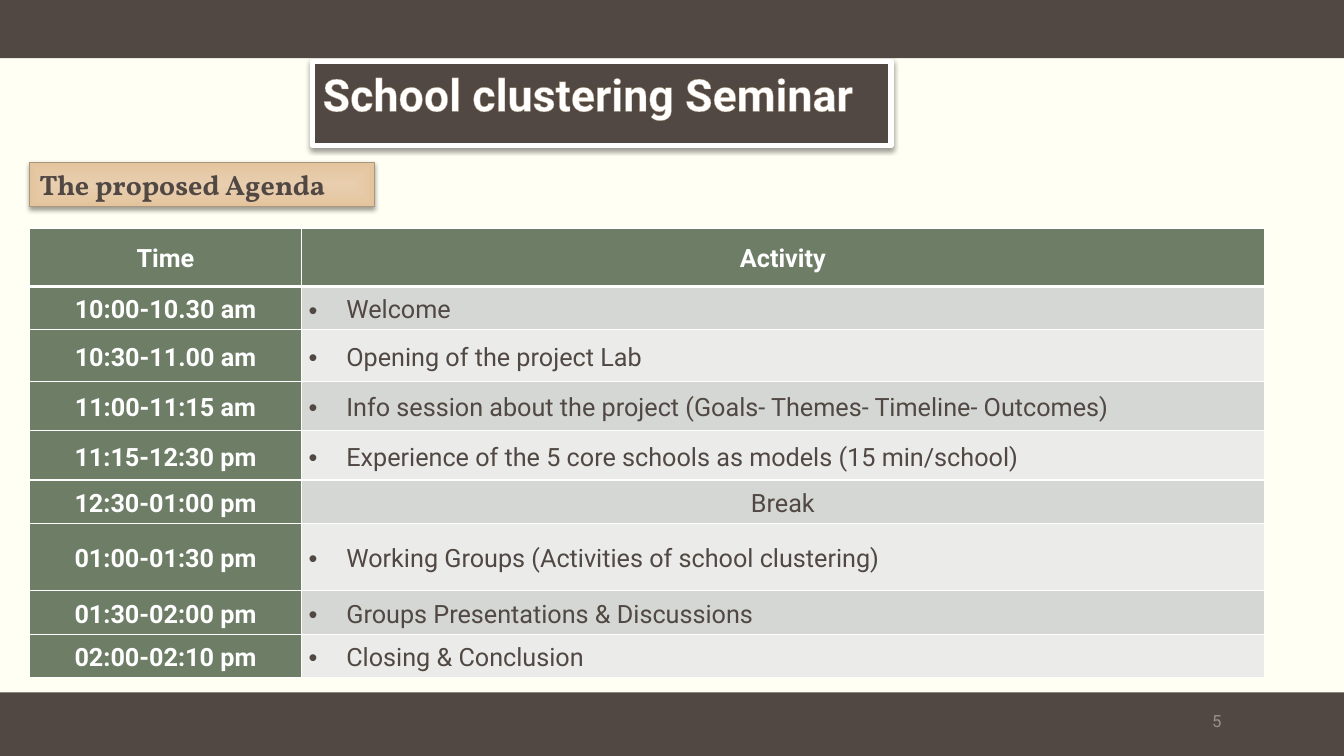
from dataclasses import dataclass

from lxml import etree
from pptx import Presentation
from pptx.dml.color import RGBColor
from pptx.enum.shapes import MSO_SHAPE
from pptx.enum.text import MSO_ANCHOR, MSO_AUTO_SIZE, PP_ALIGN
from pptx.oxml import parse_xml
from pptx.oxml.ns import qn
from pptx.util import Pt

RECTANGLE = MSO_SHAPE.RECTANGLE
TOP, MIDDLE = MSO_ANCHOR.TOP, MSO_ANCHOR.MIDDLE
LEFT, CENTER, RIGHT, JUSTIFY = PP_ALIGN.LEFT, PP_ALIGN.CENTER, PP_ALIGN.RIGHT, PP_ALIGN.JUSTIFY
FIT_SHAPE = MSO_AUTO_SIZE.SHAPE_TO_FIT_TEXT
DRAWING = 'xmlns:a="http://schemas.openxmlformats.org/drawingml/2006/main"'


@dataclass(frozen=True)
class Theme:
    page: str = "FFFFF3"
    brown: str = "514843"
    white: str = "FFFFFF"
    green: str = "6D7D66"
    stripes: tuple = ("D4D7D3", "EBECEA")
    tan: tuple = ("E8CEAF", "E4C49D")
    tan_line: str = "AB977A"
    title_outline: str = "AE9A7E"
    number: str = "9D8F88"
    body_font: str = "Roboto"
    label_font: str = "Vollkorn"
    title_size: float = 32
    label_size: float = 20
    table_size: float = 18
    number_size: float = 12


THEME = Theme()
PAGE_WIDTH, PAGE_HEIGHT = 960, 540
COLUMN_WIDTHS = (194.4, 687.6)
ROW_HEIGHTS = (41.8, 31, 36.7, 35.3, 35.3, 31, 48.2, 31, 31)
HEADINGS = ("Time", "Activity")
BREAK = "Break"
AGENDA = (
    ("10:00-10.30 am", "Welcome"),
    ("10:30-11.00 am", "Opening of the project Lab"),
    ("11:00-11:15 am", "Info session about the project (Goals- Themes- Timeline- Outcomes)"),
    ("11:15-12:30 pm", "Experience of the 5 core schools as models (15 min/school)"),
    ("12:30-01:00 pm", BREAK),
    ("01:00-01:30 pm", "Working Groups (Activities of school clustering)"),
    ("01:30-02:00 pm", "Groups Presentations & Discussions"),
    ("02:00-02:10 pm", "Closing & Conclusion"),
)


def color(value):
    return RGBColor.from_string(value)


def points(*lengths):
    return [Pt(length) for length in lengths]


def set_font(para, name, size, value, bold=False):
    para.font.name = name
    para.font.size = Pt(size)
    para.font.bold = bold
    para.font.color.rgb = color(value)


def add_shadow(shape):
    shape.shadow.inherit = False
    effects = shape._element.spPr.find(qn("a:effectLst"))
    effects.append(parse_xml(
        f'<a:outerShdw {DRAWING} blurRad="{Pt(3.5)}" dist="{Pt(2)}" dir="5400000" '
        'rotWithShape="0"><a:srgbClr val="000000"><a:alpha val="38000"/>'
        '</a:srgbClr></a:outerShdw>'))


def set_line(shape, value, width):
    shape.line.color.rgb = color(value)
    shape.line.width = Pt(width)


def fill_frame(shape, text, align):
    frame = shape.text_frame
    frame.word_wrap = True
    frame.auto_size = FIT_SHAPE
    frame.vertical_anchor = TOP
    para = frame.paragraphs[0]
    para.alignment = align
    para.add_run().text = text
    return para


def add_band(page, box):
    band = page.shapes.add_shape(RECTANGLE, *points(*box))
    band.shadow.inherit = False
    band.fill.solid()
    band.fill.fore_color.rgb = color(THEME.brown)
    band.line.fill.background()


def add_title(page, box):
    title = page.shapes.title
    title.left, title.top, title.width, title.height = points(*box)
    title.fill.solid()
    title.fill.fore_color.rgb = color(THEME.brown)
    set_line(title, THEME.white, 3.82)
    add_shadow(title)
    para = fill_frame(title, "School clustering Seminar", LEFT)
    set_font(para, THEME.body_font, THEME.title_size, THEME.white, True)
    span = para.runs[0]._r.get_or_add_rPr()
    span.insert(0, parse_xml(
        f'<a:ln {DRAWING} w="{Pt(0.8)}"><a:solidFill>'
        f'<a:srgbClr val="{THEME.title_outline}"/></a:solidFill></a:ln>'))


def add_label(page, box):
    label = page.shapes.add_shape(RECTANGLE, *points(*box))
    label.fill.gradient()
    for stop, value in zip(label.fill.gradient_stops, THEME.tan):
        stop.color.rgb = color(value)
    gradient = label._element.spPr.find(qn("a:gradFill"))
    gradient.remove(gradient.find(qn("a:lin")))
    center = etree.SubElement(gradient, qn("a:path"), path="rect")
    etree.SubElement(center, qn("a:fillToRect"), l="50000", t="50000", r="50000", b="50000")
    set_line(label, THEME.tan_line, 0.5)
    add_shadow(label)
    para = fill_frame(label, "The proposed Agenda", JUSTIFY)
    set_font(para, THEME.label_font, THEME.label_size, THEME.brown, True)


def set_borders(cell, top, bottom):
    properties = cell._tc.get_or_add_tcPr()
    for side, width in (("L", 1), ("R", 1), ("T", top), ("B", bottom)):
        properties.append(parse_xml(
            f'<a:ln{side} {DRAWING} w="{Pt(width)}"><a:solidFill>'
            f'<a:srgbClr val="{THEME.white}"/></a:solidFill></a:ln{side}>'))


def add_bullet(para):
    properties = para._p.get_or_add_pPr()
    properties.set("marL", str(Pt(27)))
    properties.set("indent", str(Pt(-27)))
    etree.SubElement(properties, qn("a:buFont"), typeface="Arial")
    etree.SubElement(properties, qn("a:buChar"), char="•")


def fill_cell(cell, text, row, column):
    heading = row == 0 or column == 0
    set_borders(cell, 3 if row == 1 else 1, 3 if row == 0 else 1)
    cell.fill.solid()
    cell.fill.fore_color.rgb = color(THEME.green if heading else THEME.stripes[(row - 1) % 2])
    cell.vertical_anchor = MIDDLE
    cell.margin_left = cell.margin_right = Pt(5)
    cell.margin_top = cell.margin_bottom = 0
    para = cell.text_frame.paragraphs[0]
    para.add_run().text = text
    para.line_spacing = 1.15
    if heading or text == BREAK:
        para.alignment = CENTER
    else:
        add_bullet(para)
    set_font(para, THEME.body_font, THEME.table_size,
             THEME.white if heading else THEME.brown, heading)


def add_agenda(page, left, top):
    rows = (HEADINGS, *AGENDA)
    box = points(left, top, sum(COLUMN_WIDTHS), sum(ROW_HEIGHTS))
    table = page.shapes.add_table(len(rows), len(HEADINGS), *box).table
    for column, width in zip(table.columns, COLUMN_WIDTHS):
        column.width = Pt(width)
    for row, height in zip(table.rows, ROW_HEIGHTS):
        row.height = Pt(height)
    for row, texts in enumerate(rows):
        for column, text in enumerate(texts):
            fill_cell(table.cell(row, column), text, row, column)


def add_page_number(page, box):
    frame = page.shapes.add_textbox(*points(*box)).text_frame
    frame.word_wrap = True
    frame.vertical_anchor = MIDDLE
    frame.margin_left = frame.margin_right = 0
    para = frame.paragraphs[0]
    para.alignment = RIGHT
    para.add_run().text = "5"
    set_font(para, THEME.body_font, THEME.number_size, THEME.number)


def main():
    deck = Presentation()
    deck.slide_width, deck.slide_height = points(PAGE_WIDTH, PAGE_HEIGHT)
    page = deck.slides.add_slide(deck.slide_layouts.get_by_name("Title Only"))
    page.background.fill.solid()
    page.background.fill.fore_color.rgb = color(THEME.page)
    add_band(page, (0, 0, PAGE_WIDTH, 41.6))
    add_band(page, (0, 494.6, PAGE_WIDTH, PAGE_HEIGHT - 494.6))
    add_title(page, (223.2, 44, 413.3, 46))
    add_agenda(page, 21, 162.8)
    add_label(page, (21, 116, 246.2, 31.6))
    add_page_number(page, (728.6, 500.4, 144, 28.8))
    deck.save("out.pptx")


if __name__ == "__main__":
    main()
